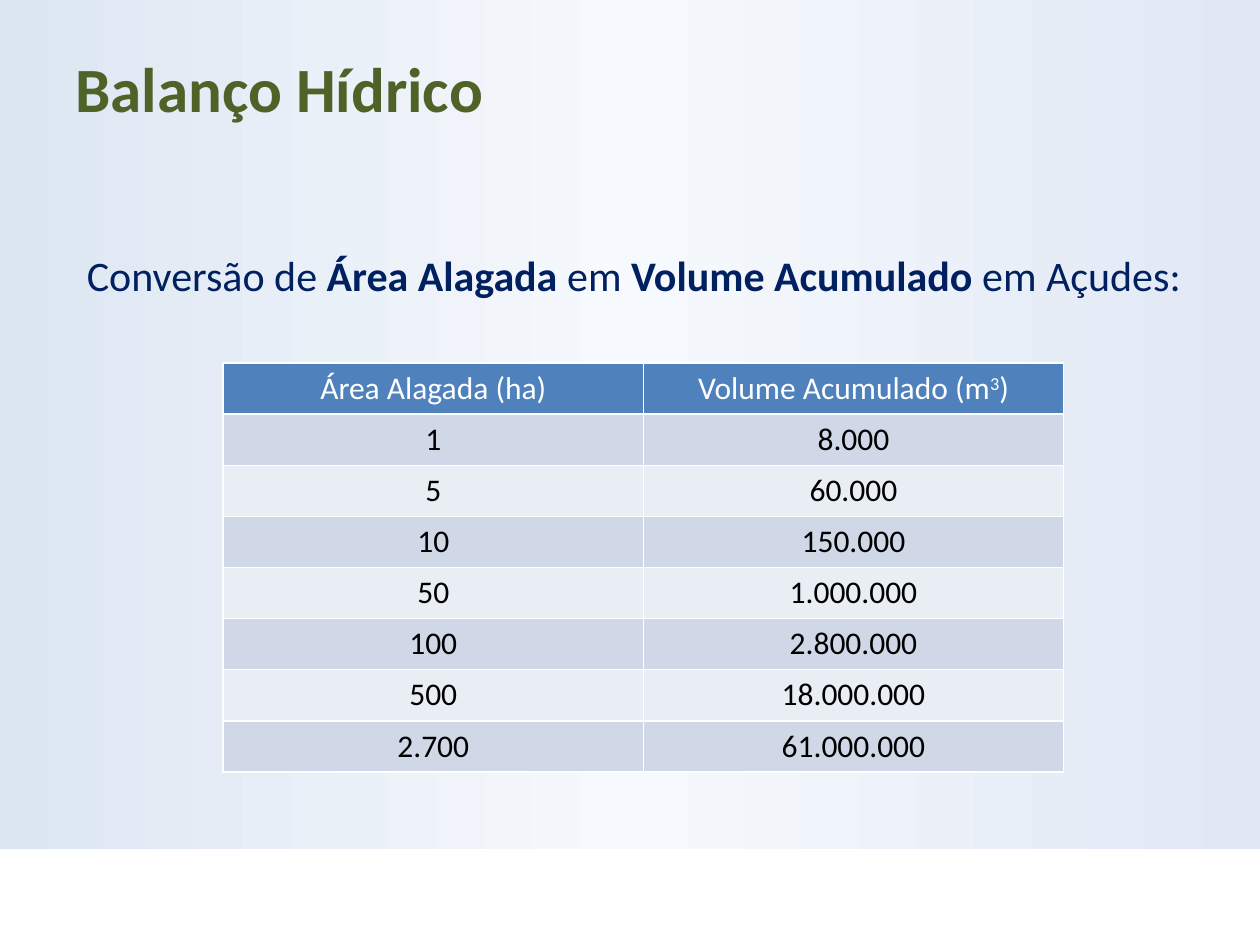
import copy

import lxml.etree
import pptx
import pptx.dml.color
import pptx.enum.shapes
import pptx.enum.text
import pptx.oxml
import pptx.oxml.ns
import pptx.util

Cm, Pt = pptx.util.Cm, pptx.util.Pt
PP_ALIGN = pptx.enum.text.PP_ALIGN
ANCHOR = pptx.enum.text.MSO_ANCHOR
qn = pptx.oxml.ns.qn

FONT = "Calibri"
COLORS = {
    "band": ["DCE6F2", "F6F9FD", "E1E8F5"],
    "title": "4F6228",
    "intro": "002060",
    "header": "4F81BD",
    "odd": "D0D8E8",
    "even": "E9EDF4",
    "white": "FFFFFF",
    "black": "000000",
}
ROWS = [
    ("Área Alagada (ha)", "Volume Acumulado (m3)"),
    ("1", "8.000"),
    ("5", "60.000"),
    ("10", "150.000"),
    ("50", "1.000.000"),
    ("100", "2.800.000"),
    ("500", "18.000.000"),
    ("2.700", "61.000.000"),
]


def rgb(color):
    return pptx.dml.color.RGBColor.from_string(color)


def set_font(p, size, color, bold=None):
    p.font.name = FONT
    p.font.size = Pt(size)
    p.font.bold = bold
    p.font.color.rgb = rgb(color)


prs = pptx.Presentation()
prs.slide_width, prs.slide_height = Cm(25.4), Cm(19.05)
s = prs.slides.add_slide(prs.slide_layouts[5])

# Gradient band, placed behind the title
band = s.shapes.add_shape(
    pptx.enum.shapes.MSO_SHAPE.RECTANGLE, 0, 0, prs.slide_width, Cm(17.12))
band.shadow.inherit = False
band.line.fill.background()
band.fill.gradient()
band.fill.gradient_angle = 0
stops = band.fill._fill._gradFill.find(qn("a:gsLst"))
stops.insert(1, copy.deepcopy(stops[0]))
for i, color in enumerate(COLORS["band"]):
    stop = stops[i]
    stop.set("pos", str(i * 50000))
    stop.remove(stop[0])
    lxml.etree.SubElement(stop, qn("a:srgbClr"), val=color)
s.shapes._spTree.insert(2, band._element)

# Title
title = s.shapes.title
title.left, title.top, title.width, title.height = Cm(1.27), Cm(0.76), Cm(22.86), Cm(2.16)
tf = title.text_frame
tf.text = "Balanço Hídrico"
tf.vertical_anchor = ANCHOR.MIDDLE
tf.margin_bottom = Cm(0.3)
tf.paragraphs[0].alignment = PP_ALIGN.LEFT
set_font(tf.paragraphs[0], 36, COLORS["title"], True)

# Introductory sentence
intro = s.shapes.add_textbox(Cm(1.5), Cm(4.9), Cm(23.9), Cm(1.28))
tf = intro.text_frame
tf.word_wrap = True
p = tf.paragraphs[0]
set_font(p, 24, COLORS["intro"])
for text, bold in [("Conversão de ", False), ("Área Alagada ", True), ("em ", False),
                   ("Volume Acumulado ", True), ("em Açudes:", False)]:
    r = p.add_run()
    r.text = text
    r.font.bold = bold

# Conversion table
table = s.shapes.add_table(len(ROWS), 2, Cm(4.5), Cm(7.32), Cm(16.94), Cm(8.24)).table
for i, values in enumerate(ROWS):
    table.rows[i].height = Cm(1.03)
    fill = COLORS["header"] if i == 0 else COLORS["odd" if i % 2 else "even"]
    for j, value in enumerate(values):
        cell = table.cell(i, j)
        p = cell.text_frame.paragraphs[0]
        p.alignment = PP_ALIGN.CENTER
        set_font(p, 18, COLORS["black" if i else "white"], False)
        before, cube, after = value.partition("m3")
        if cube:
            for text in (before + "m", "3", after):
                r = p.add_run()
                r.text = text
                if text == "3":
                    r.font._element.set("baseline", "30000")
        else:
            p.add_run().text = value
        tcPr = cell._tc.get_or_add_tcPr()
        for side in ("a:lnL", "a:lnR", "a:lnT", "a:lnB"):
            ln = lxml.etree.SubElement(tcPr, qn(side), w=str(Pt(1)))
            line_fill = lxml.etree.SubElement(ln, qn("a:solidFill"))
            lxml.etree.SubElement(line_fill, qn("a:srgbClr"), val=COLORS["white"])
        cell.fill.solid()
        cell.fill.fore_color.rgb = rgb(fill)

prs.save("out.pptx")
